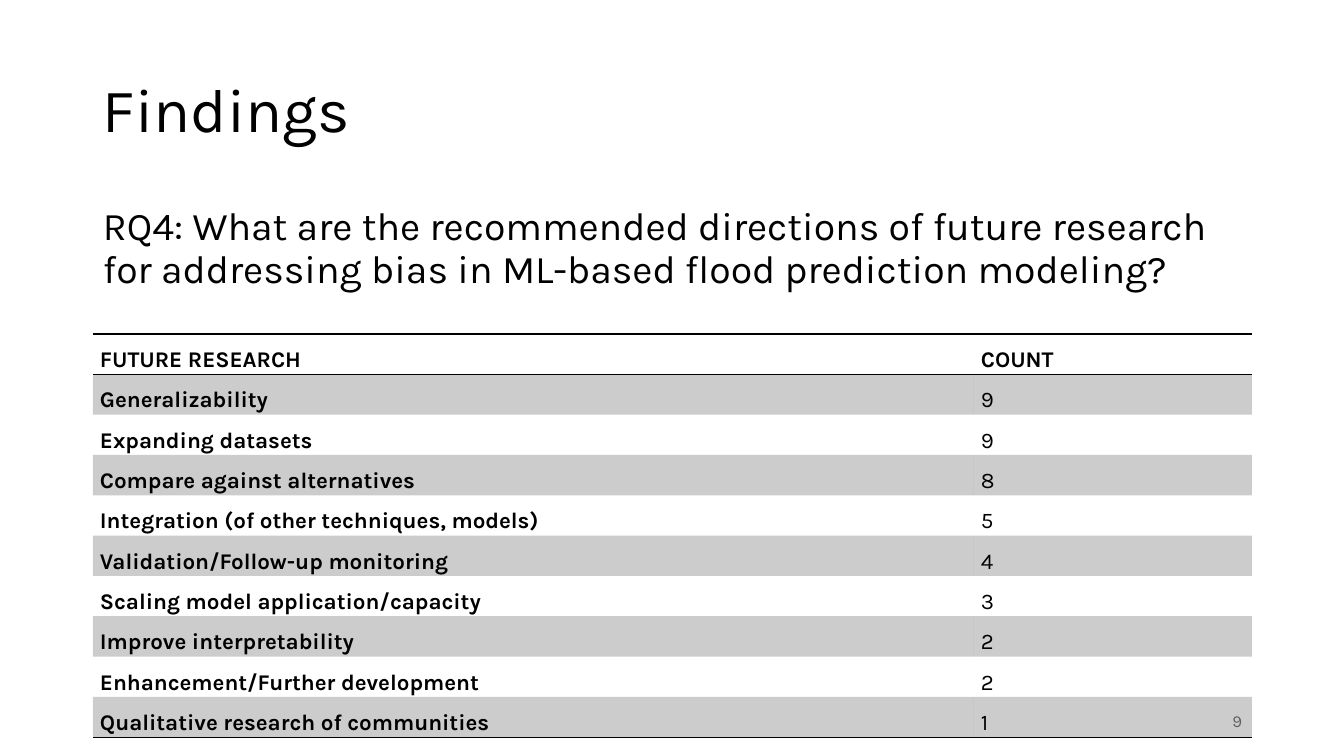
from lxml import etree
from pptx import Presentation
from pptx.dml.color import RGBColor
from pptx.enum.text import MSO_ANCHOR, PP_ALIGN
from pptx.oxml.ns import qn
from pptx.util import Pt

TOP, MIDDLE = MSO_ANCHOR.TOP, MSO_ANCHOR.MIDDLE
LEFT, RIGHT = PP_ALIGN.LEFT, PP_ALIGN.RIGHT

TITLE = "Findings"
QUESTION = (
    "RQ4: What are the recommended directions of future research "
    "for addressing bias in ML-based flood prediction modeling?"
)
PAGE = "9"
ROWS = [
    ("FUTURE RESEARCH", "COUNT"),
    ("Generalizability", "9"),
    ("Expanding datasets", "9"),
    ("Compare against alternatives", "8"),
    ("Integration (of other techniques, models)", "5"),
    ("Validation/Follow-up monitoring", "4"),
    ("Scaling model application/capacity", "3"),
    ("Improve interpretability", "2"),
    ("Enhancement/Further development", "2"),
    ("Qualitative research of communities", "1"),
]

THEME = {
    "font": "Karla",
    "ink": "000000",
    "muted": "797979",
    "title": 44,
    "body": 28,
    "cell": 16,
    "page": 12,
    "band": 20,
    "rule": 1,
}
NO_GRID = "{2D5ABB26-0587-4C30-8999-92F81FD0307C}"

WIDE, HIGH = 1344, 756
EDGE, SPAN = 93, 1159
COLS = (881, 278)
TABLE_TOP, ROW_HIGH, INSET = 334, 39, 7


def px(count):
    return round(count * 914400 / 100.8)


def style(para, size, color="ink", bold=False, spacing=None):
    para.line_spacing = spacing
    font = para.runs[0].font
    font.name = THEME["font"]
    font.size = Pt(THEME[size])
    font.bold = bold
    font.color.rgb = RGBColor.from_string(THEME[color])


def add_text(slide, text, box, size, color="ink", anchor=MIDDLE,
             align=LEFT, spacing=None):
    frame = slide.shapes.add_textbox(*map(px, box)).text_frame
    frame.word_wrap = True
    frame.vertical_anchor = anchor
    frame.text = text
    para = frame.paragraphs[0]
    para.alignment = align
    style(para, size, color, spacing=spacing)
    return para


def add_rule(cell, side):
    """Draw one cell border; side is lnT or lnB."""
    line = etree.SubElement(cell._tc.get_or_add_tcPr(), qn("a:" + side),
                            w=str(Pt(THEME["rule"])))
    fill = etree.SubElement(line, qn("a:solidFill"))
    etree.SubElement(fill, qn("a:srgbClr"), val=THEME["ink"])


def shade(cell):
    """Fill a cell with see-through ink."""
    cell.fill.solid()
    cell.fill.fore_color.rgb = RGBColor.from_string(THEME["ink"])
    color = cell._tc.tcPr.find(qn("a:solidFill")).find(qn("a:srgbClr"))
    etree.SubElement(color, qn("a:alpha"), val=str(THEME["band"] * 1000))


def add_counts(slide):
    box = (EDGE, TABLE_TOP, SPAN, ROW_HIGH * len(ROWS))
    table = slide.shapes.add_table(len(ROWS), len(COLS), *map(px, box)).table
    table._tbl.tblPr.find(qn("a:tableStyleId")).text = NO_GRID
    for col, width in zip(table.columns, COLS):
        col.width = px(width)
    for r, row in enumerate(ROWS):
        for c, text in enumerate(row):
            cell = table.cell(r, c)
            cell.margin_left = cell.margin_right = px(INSET)
            cell.margin_top = cell.margin_bottom = 0
            cell.text = text
            style(cell.text_frame.paragraphs[0], "cell",
                  bold=r == 0 or c == 0, spacing=1.5)
            if r == 0:
                add_rule(cell, "lnT")
            if r in (0, len(ROWS) - 1):
                add_rule(cell, "lnB")
            if r % 2:
                shade(cell)
            else:
                cell.fill.background()


def main():
    deck = Presentation()
    deck.slide_width, deck.slide_height = px(WIDE), px(HIGH)
    slide = deck.slides.add_slide(deck.slide_layouts[6])
    add_text(slide, TITLE, (EDGE, 40, SPAN, 146), "title", spacing=0.9)
    lead = add_text(slide, QUESTION, (EDGE, 202, SPAN, 480), "body",
                    anchor=TOP, spacing=0.9)
    lead.space_before = Pt(10)
    add_text(slide, PAGE, (950, 701, 302, 40), "page", "muted", align=RIGHT)
    add_counts(slide)
    deck.save("out.pptx")


if __name__ == "__main__":
    main()
